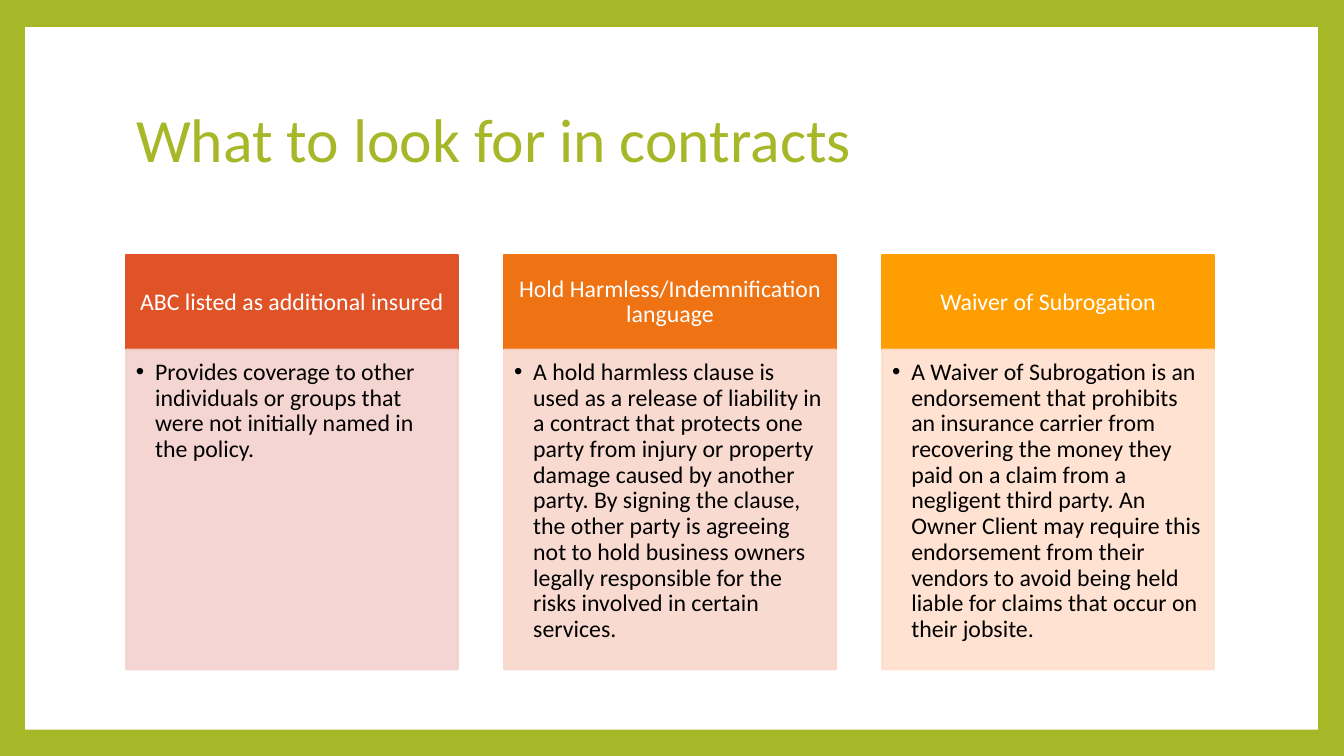
from lxml.etree import SubElement
from pptx import Presentation
from pptx.dml.color import RGBColor
from pptx.enum.shapes import MSO_SHAPE
from pptx.enum.text import MSO_ANCHOR, PP_ALIGN
from pptx.oxml.ns import qn
from pptx.util import Inches, Pt

GREEN, WHITE, BLACK = "A6B727", "FFFFFF", "000000"
LEFT, COLUMN_WIDTH, COLUMN_STEP = 1.25, 3.29, 3.75
HEADER_TOP, HEADER_HEIGHT, BODY_HEIGHT = 2.53, 0.94, 3.17

# Heading, heading colour, body colour, body text
COLUMNS = [
    ("ABC listed as additional insured", "DF5327", "F3D1CD",
     "Provides coverage to other individuals or groups that were not initially "
     "named in the policy."),
    ("Hold Harmless/Indemnification language", "EF7213", "F9D7CC",
     "A hold harmless clause is used as a release of liability in a contract that "
     "protects one party from injury or property damage caused by another party. "
     "By signing the clause, the other party is agreeing not to hold business owners "
     "legally responsible for the risks involved in certain services."),
    ("Waiver of Subrogation", "FE9E00", "FFDFCC",
     "A Waiver of Subrogation is an endorsement that prohibits an insurance carrier "
     "from recovering the money they paid on a claim from a negligent third party. "
     "An Owner Client may require this endorsement from their vendors to avoid being "
     "held liable for claims that occur on their jobsite."),
]


def color(value):
    return RGBColor.from_string(value)


class SlideBuilder:
    def __init__(self, slide, font="Calibri"):
        self.slide = slide
        self.font = font

    def background(self, fill):
        self.slide.background.fill.solid()
        self.slide.background.fill.fore_color.rgb = color(fill)

    def set_text(self, shape, text, size, text_color, align, anchor):
        frame = shape.text_frame
        frame.text = text
        frame.word_wrap = True
        frame.vertical_anchor = anchor
        paragraph = frame.paragraphs[0]
        paragraph.alignment = align
        paragraph.line_spacing = 0.9
        font = paragraph.runs[0].font
        font.name, font.size = self.font, Pt(size)
        font.color.rgb = color(text_color)
        return paragraph

    def title(self, text, left, top, width, height):
        title = self.slide.shapes.title
        title.left, title.top = Inches(left), Inches(top)
        title.width, title.height = Inches(width), Inches(height)
        self.set_text(title, text, 44, GREEN, PP_ALIGN.LEFT, MSO_ANCHOR.MIDDLE)

    def box(self, left, top, width, height, fill, outlined=True, opacity=100):
        shape = self.slide.shapes.add_shape(
            MSO_SHAPE.RECTANGLE, Inches(left), Inches(top), Inches(width), Inches(height))
        shape.shadow.inherit = False
        shape.fill.solid()
        shape.fill.fore_color.rgb = color(fill)
        if outlined:
            shape.line.color.rgb = color(fill)
            shape.line.width = Pt(1.5)
        else:
            shape.line.fill.background()
        if opacity < 100:
            for value in shape.element.spPr.iter(qn("a:srgbClr")):
                SubElement(value, qn("a:alpha"), val=str(opacity * 1000))
        return shape

    def back_panel(self, left, top, width, height):
        panel = self.box(left, top, width, height, WHITE, outlined=False)
        self.slide.shapes.title.element.addprevious(panel.element)

    def margins(self, shape, left, top, right, bottom):
        frame = shape.text_frame
        frame.margin_left, frame.margin_top = Inches(left), Inches(top)
        frame.margin_right, frame.margin_bottom = Inches(right), Inches(bottom)

    def bullet(self, paragraph, indent):
        properties = paragraph._p.get_or_add_pPr()
        properties.set("marL", str(Inches(indent)))
        properties.set("indent", str(-Inches(indent)))
        SubElement(properties, qn("a:buFont"), typeface="Arial")
        SubElement(properties, qn("a:buChar"), char="•")

    def column(self, left, heading, heading_fill, body_fill, body):
        header = self.box(left, HEADER_TOP, COLUMN_WIDTH, HEADER_HEIGHT, heading_fill)
        self.margins(header, 0.13, 0.08, 0.13, 0.08)
        self.set_text(header, heading, 17, WHITE, PP_ALIGN.CENTER, MSO_ANCHOR.MIDDLE)

        panel = self.box(left, HEADER_TOP + HEADER_HEIGHT, COLUMN_WIDTH, BODY_HEIGHT,
                         body_fill, opacity=90)
        self.margins(panel, 0.1, 0.1, 0.13, 0.15)
        paragraph = self.set_text(panel, body, 17, BLACK, PP_ALIGN.LEFT, MSO_ANCHOR.TOP)
        self.bullet(paragraph, 0.19)


def main():
    presentation = Presentation()
    presentation.slide_width, presentation.slide_height = Inches(13.33), Inches(7.5)
    builder = SlideBuilder(presentation.slides.add_slide(presentation.slide_layouts[5]))

    # Green frame around a white panel
    builder.background(GREEN)
    builder.back_panel(0.25, 0.27, 12.82, 6.97)

    builder.title("What to look for in contracts", LEFT, 0.67, 10.8, 1.48)

    # Three contract clauses
    for index, clause in enumerate(COLUMNS):
        builder.column(LEFT + index * COLUMN_STEP, *clause)

    presentation.save("out.pptx")


if __name__ == "__main__":
    main()
